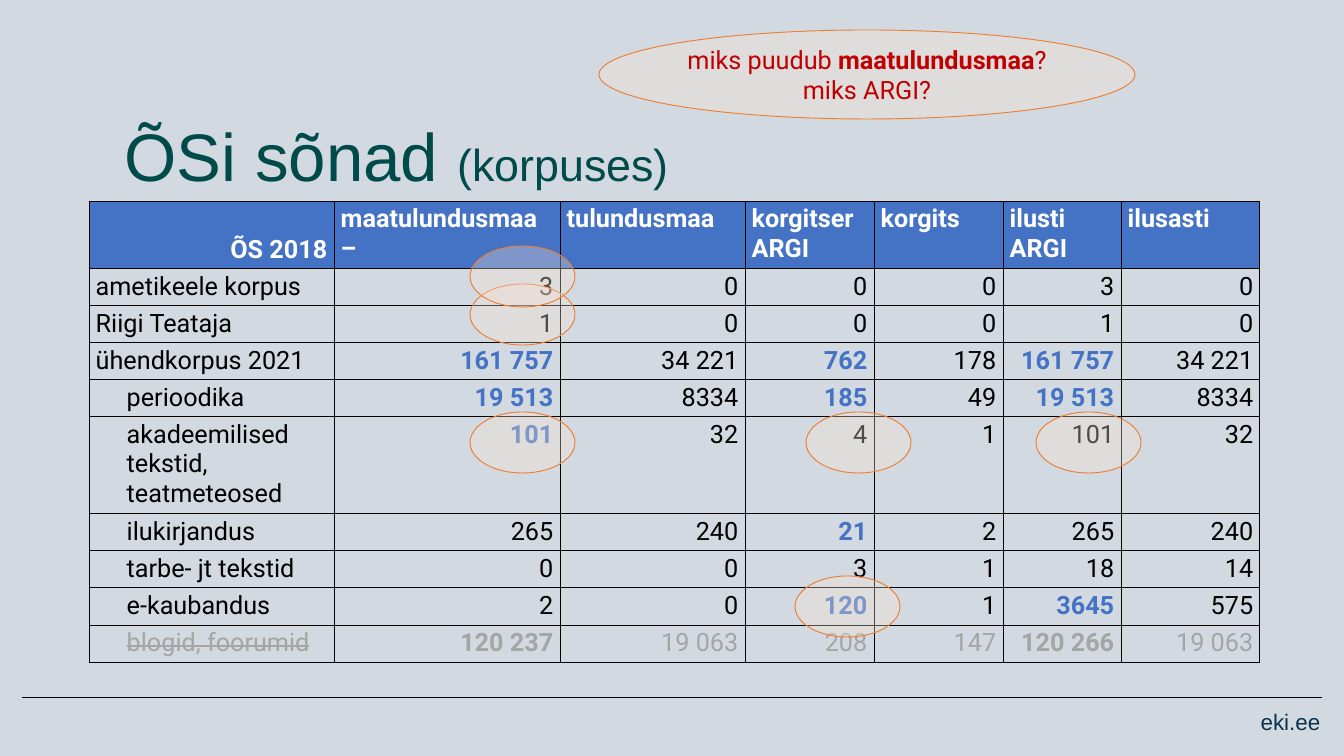
"""Build the ÕS words slide with its corpus frequency table."""
from lxml import etree
from pptx import Presentation
from pptx import util as u
from pptx.dml.color import RGBColor
from pptx.enum import shapes, text
from pptx.oxml import ns

BACKGROUND = RGBColor(0xD3, 0xD9, 0xE1)
BLACK = RGBColor(0x00, 0x00, 0x00)
WHITE = RGBColor(0xFF, 0xFF, 0xFF)
BLUE = RGBColor(0x44, 0x72, 0xC4)
GREY = RGBColor(0xA5, 0xA5, 0xA5)
GREEN = RGBColor(0x00, 0x4A, 0x4A)
NAVY = RGBColor(0x0A, 0x33, 0x49)
RED = RGBColor(0xC0, 0x00, 0x00)
ORANGE = RGBColor(0xED, 0x7D, 0x31)
PEACH = RGBColor(0xFB, 0xE4, 0xD4)

LEFT, CENTER, RIGHT = text.PP_ALIGN.LEFT, text.PP_ALIGN.CENTER, text.PP_ALIGN.RIGHT
TOP, BOTTOM = text.MSO_ANCHOR.TOP, text.MSO_ANCHOR.BOTTOM

COLUMNS = [245, 226, 185, 129, 129, 118, 139]
ROW, HEADER_ROW, TALL_ROW = 36, 67, 95
HEADER = ["ÕS 2018", "maatulundusmaa\n–", "tulundusmaa", "korgitser\nARGI",
          "korgits", "ilusti\nARGI", "ilusasti"]
TOTALS = [
    ["ametikeele korpus", "3", "0", "0", "0", "3", "0"],
    ["Riigi Teataja", "1", "0", "0", "0", "1", "0"],
    ["ühendkorpus 2021", "*161 757", "34 221", "*762", "178", "*161 757", "34 221"],
]
GENRES = [
    ["perioodika", "*19 513", "8334", "*185", "49", "*19 513", "8334"],
    ["akadeemilised\ntekstid,\nteatmeteosed", "*101", "32", "4", "1", "101", "32"],
    ["ilukirjandus", "265", "240", "*21", "2", "265", "240"],
    ["tarbe- jt tekstid", "0", "0", "3", "1", "18", "14"],
    ["e-kaubandus", "2", "0", "*120", "1", "*3645", "575"],
]
EXCLUDED = ["blogid, foorumid", "*120 237", "19 063", "208", "147", "*120 266", "19 063"]
HIGHLIGHTS = [(470, 412), (470, 284), (470, 246), (1036, 412), (806, 412), (795, 576)]


class Deck:
    """Hold the slide style and draw each kind of element."""

    scale = u.Inches(20) / 1344
    title_font, body_font, body_size = "Arial", "Roboto", 27

    def __init__(self):
        self.prs = Presentation()
        self.prs.slide_width, self.prs.slide_height = self.px(1344, 756)
        self.s = self.prs.slides.add_slide(self.prs.slide_layouts[5])
        self.s.background.fill.solid()
        self.s.background.fill.fore_color.rgb = BACKGROUND

    def px(self, *lengths):
        return [u.Emu(round(n * self.scale)) for n in lengths]

    def font(self, p, name, size, color, bold=False):
        p.font.name, p.font.size, p.font.bold = name, u.Pt(size), bold
        p.font.color.rgb = color

    def title(self, x, y, w, h, main, detail):
        sp = self.s.shapes.title
        sp.left, sp.top, sp.width, sp.height = self.px(x, y, w, h)
        tf = sp.text_frame
        tf.auto_size, tf.vertical_anchor = text.MSO_AUTO_SIZE.NONE, BOTTOM
        p = tf.paragraphs[0]
        p.alignment, p.line_spacing = LEFT, 0.9
        self.font(p, self.title_font, 72, GREEN)
        p.add_run().text = main
        r = p.add_run()
        r.text, r.font.size = detail, u.Pt(48)

    def label(self, x, y, w, h, words):
        tf = self.s.shapes.add_textbox(*self.px(x, y, w, h)).text_frame
        tf.word_wrap = True
        p = tf.paragraphs[0]
        p.text, p.alignment, p.line_spacing = words, RIGHT, 0.9
        self.font(p, self.title_font, 24, NAVY)

    def rule(self, x1, y1, x2, y2):
        line = self.s.shapes.add_connector(
            shapes.MSO_CONNECTOR.STRAIGHT, *self.px(x1, y1, x2, y2))
        line.line.color.rgb, line.line.width = BLACK, u.Pt(1)
        etree.SubElement(line._element.spPr, ns.qn("a:effectLst"))

    def ellipse(self, x, y, w, h):
        sp = self.s.shapes.add_shape(shapes.MSO_SHAPE.OVAL, *self.px(x, y, w, h))
        sp.shadow.inherit = False
        sp.fill.solid()
        sp.fill.fore_color.rgb = PEACH
        color = sp._element.spPr.find(".//" + ns.qn("a:srgbClr"))
        etree.SubElement(color, ns.qn("a:alpha"), val="32000")
        sp.line.color.rgb, sp.line.width = ORANGE, u.Pt(1)
        return sp

    def callout(self, x, y, w, h, lines):
        tf = self.ellipse(x, y, w, h).text_frame
        for i, line in enumerate(lines):
            p = tf.add_paragraph() if i else tf.paragraphs[0]
            p.alignment = CENTER
            self.font(p, self.body_font, self.body_size, RED)
            for words, bold in line:
                r = p.add_run()
                r.text = words
                if bold:
                    r.font.bold = True

    def table(self, x, y, columns, heights):
        frame = self.s.shapes.add_table(
            len(heights), len(columns), *self.px(x, y, sum(columns), sum(heights)))
        tbl = frame.table
        tbl.first_row = tbl.horz_banding = False
        for column, width in zip(tbl.columns, self.px(*columns)):
            column.width = width
        for row, height in zip(tbl.rows, self.px(*heights)):
            row.height = height
        return tbl

    def cell(self, cell, words, color, bold=False, align=LEFT, anchor=TOP,
             fill=None, indent=0, strike=False):
        cell.vertical_anchor = anchor
        p = cell.text_frame.paragraphs[0]
        p.text, p.alignment = words, align
        if indent:
            p._p.get_or_add_pPr().set("marL", str(self.px(indent)[0]))
        self.font(p, self.body_font, self.body_size, color, bold)
        if strike:
            p.runs[0]._r.get_or_add_rPr().set("strike", "sngStrike")
        tcPr = cell._tc.get_or_add_tcPr()
        for side in ("lnL", "lnR", "lnT", "lnB"):
            ln = etree.SubElement(tcPr, ns.qn("a:" + side), w=str(u.Pt(1)))
            solid = etree.SubElement(ln, ns.qn("a:solidFill"))
            etree.SubElement(solid, ns.qn("a:srgbClr"), val=str(BLACK))
        if fill is None:
            cell.fill.background()
        else:
            cell.fill.solid()
            cell.fill.fore_color.rgb = fill


def frequency_table(deck):
    rows = TOTALS + GENRES + [EXCLUDED]
    heights = [HEADER_ROW] + [TALL_ROW if "\n" in row[0] else ROW for row in rows]
    tbl = deck.table(89, 201, COLUMNS, heights)
    for col, words in enumerate(HEADER):
        align, anchor = (LEFT, TOP) if col else (RIGHT, BOTTOM)
        deck.cell(tbl.cell(0, col), words, WHITE, True, align, anchor, BLUE)
    for i, (name, *counts) in enumerate(rows):
        excluded = rows[i] is EXCLUDED
        plain, strong = (GREY, GREY) if excluded else (BLACK, BLUE)
        deck.cell(tbl.cell(i + 1, 0), name, plain, strike=excluded,
                  indent=0 if i < len(TOTALS) else 31)
        for col, count in enumerate(counts, 1):
            bold = count.startswith("*")
            deck.cell(tbl.cell(i + 1, col), count.lstrip("*"),
                      strong if bold else plain, bold, RIGHT)


def main():
    deck = Deck()
    deck.rule(22, 697, 1322, 697)
    deck.label(1092, 708, 235, 39, "eki.ee")
    deck.title(118, 110, 1204, 89, "ÕSi sõnad ", "(korpuses)")
    frequency_table(deck)
    for x, y in HIGHLIGHTS:
        deck.ellipse(x, y, 105, 61)
    deck.callout(599, 30, 536, 89, [
        [("miks puudub ", False), ("maatulundusmaa", True), ("?", False)],
        [("miks ARGI?", False)],
    ])
    deck.prs.save("out.pptx")


if __name__ == "__main__":
    main()
